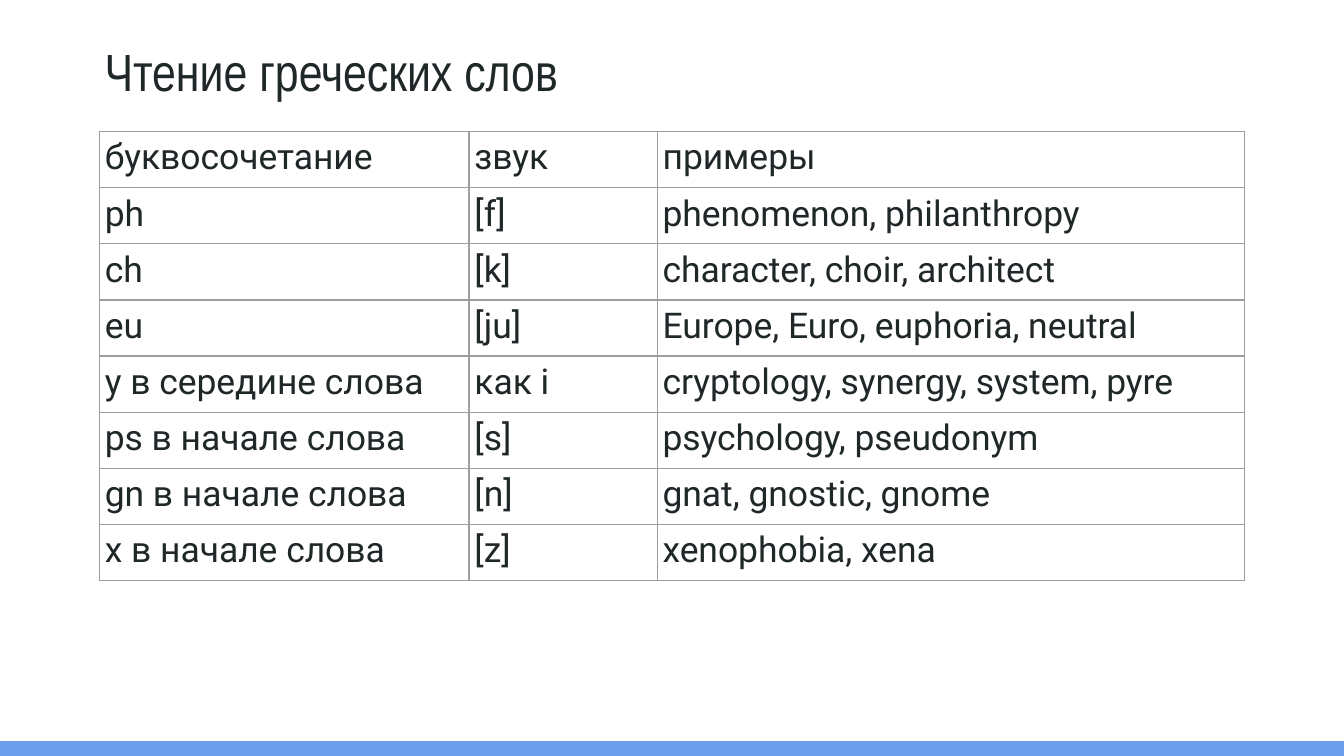
from lxml.etree import SubElement
from pptx import Presentation
from pptx.dml.color import RGBColor
from pptx.enum.shapes import MSO_SHAPE
from pptx.enum.text import MSO_ANCHOR
from pptx.oxml.ns import qn
from pptx.util import Inches, Pt

SLIDE_WIDTH = 10
SLIDE_HEIGHT = SLIDE_WIDTH * 9 / 16
FOOTER_HEIGHT = 0.11
COLORS = {"text": "202729", "border": "9E9E9E", "footer": "6D9EEB", "background": "FFFFFF"}
TITLE_FONT = {"name": "Arial Narrow", "size": Pt(28)}
CELL_FONT = {"name": "Roboto", "size": Pt(19)}
CELL_FORMAT = {"vertical_anchor": MSO_ANCHOR.TOP} | {
    f"margin_{side}": Inches(0.04) for side in ("left", "right", "top", "bottom")
}
TITLE_FORMAT = {"word_wrap": True, "vertical_anchor": MSO_ANCHOR.MIDDLE} | {
    f"margin_{side}": Inches(0.1) for side in ("left", "right", "top", "bottom")
}
COLUMN_WIDTHS = (2.75, 1.4, 4.37)
ROWS = (
    ("буквосочетание", "звук", "примеры"),
    ("ph", "[f]", "phenomenon, philanthropy"),
    ("ch", "[k]", "character, choir, architect"),
    ("eu", "[ju]", "Europe, Euro, euphoria, neutral"),
    ("y в середине слова", "как i", "cryptology, synergy, system, pyre"),
    ("ps в начале слова", "[s]", "psychology, pseudonym"),
    ("gn в начале слова", "[n]", "gnat, gnostic, gnome"),
    ("x в начале слова", "[z]", "xenophobia, xena"),
)


def color(name):
    return RGBColor.from_string(COLORS[name])


def apply_format(target, values):
    for name, value in values.items():
        setattr(target, name, value)


def write_text(paragraph, text, font):
    run = paragraph.add_run()
    run.text = text
    apply_format(run.font, font)
    run.font.color.rgb = color("text")


def set_borders(cell):
    properties = cell._tc.get_or_add_tcPr()
    for index, tag in enumerate(("a:lnL", "a:lnR", "a:lnT", "a:lnB")):
        line = properties.makeelement(qn(tag), {"w": str(Pt(0.75))})
        fill = SubElement(line, qn("a:solidFill"))
        SubElement(fill, qn("a:srgbClr"), val=COLORS["border"])
        properties.insert(index, line)


def add_footer_bar(slide, left, top, width, height):
    bar = slide.shapes.add_shape(
        MSO_SHAPE.RECTANGLE, Inches(left), Inches(top), Inches(width), Inches(height)
    )
    bar.shadow.inherit = False
    bar.fill.solid()
    bar.fill.fore_color.rgb = color("footer")
    bar.line.fill.background()


def add_title(slide, text, left, top, width, height):
    box = slide.shapes.add_textbox(Inches(left), Inches(top), Inches(width), Inches(height))
    apply_format(box.text_frame, TITLE_FORMAT)
    write_text(box.text_frame.paragraphs[0], text, TITLE_FONT)


def add_reading_table(slide, left, top, width, height):
    table = slide.shapes.add_table(
        len(ROWS), len(COLUMN_WIDTHS), Inches(left), Inches(top), Inches(width), Inches(height)
    ).table
    apply_format(table, {"first_row": False, "horz_banding": False})
    for column, column_width in zip(table.columns, COLUMN_WIDTHS):
        column.width = Inches(column_width)
    for row, texts in zip(table.rows, ROWS):
        row.height = Inches(height / len(ROWS))
        for cell, text in zip(row.cells, texts):
            apply_format(cell, CELL_FORMAT)
            cell.fill.background()
            set_borders(cell)
            paragraph = cell.text_frame.paragraphs[0]
            paragraph.space_after = Pt(10)
            write_text(paragraph, text, CELL_FONT)


def main():
    presentation = Presentation()
    presentation.slide_width = Inches(SLIDE_WIDTH)
    presentation.slide_height = Inches(SLIDE_HEIGHT)
    slide = presentation.slides.add_slide(presentation.slide_layouts[6])
    slide.background.fill.solid()
    slide.background.fill.fore_color.rgb = color("background")
    add_footer_bar(slide, 0, SLIDE_HEIGHT - FOOTER_HEIGHT, SLIDE_WIDTH, FOOTER_HEIGHT)
    add_title(slide, "Чтение греческих слов", 0.68, 0.21, 9.32, 0.63)
    add_reading_table(slide, 0.74, 0.98, sum(COLUMN_WIDTHS), 3.34)
    presentation.save("out.pptx")


if __name__ == "__main__":
    main()
